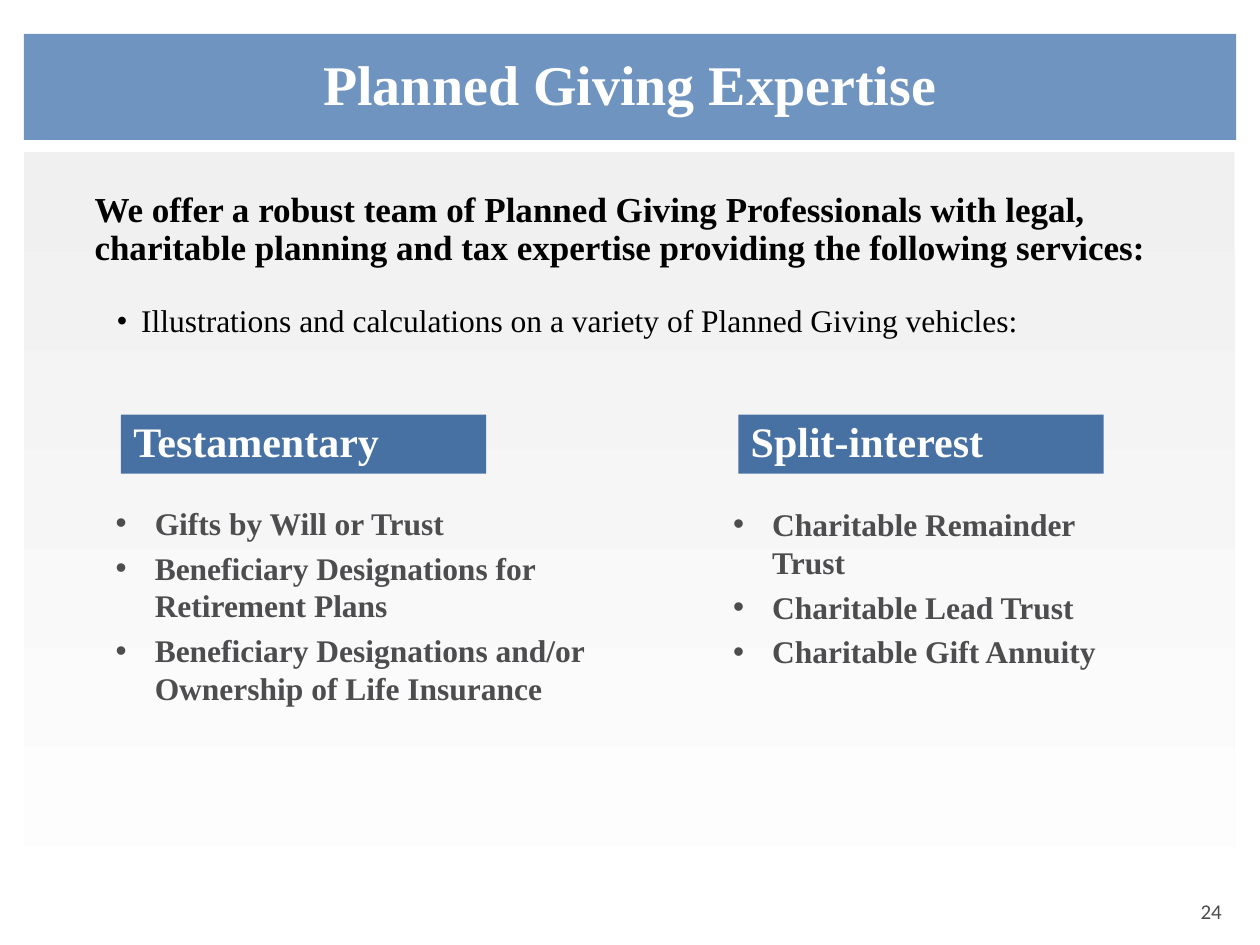
"""Build the Planned Giving Expertise slide."""
from dataclasses import dataclass, field
from typing import Any, NamedTuple

from lxml import etree
from pptx import Presentation, util as u
from pptx.dml.color import RGBColor
from pptx.enum import shapes, text
from pptx.oxml.ns import qn


@dataclass(frozen=True)
class Theme:
    serif: str = "Times New Roman"
    sans: str = "Calibri"
    banner: str = "6F94C0"
    heading: str = "4771A3"
    panel: tuple[str, str] = ("F1F0F0", "FFFFFF")
    white: str = "FFFFFF"
    black: str = "000000"
    grey: str = "4D4D4F"
    title_size: int = 32
    heading_size: int = 24
    intro_size: int = 20
    list_size: int = 18
    number_size: int = 12


class Box(NamedTuple):
    left: float
    top: float
    width: float
    height: float

    def emu(self) -> list[int]:
        return [u.Inches(length) for length in self]


@dataclass(frozen=True)
class Line:
    words: str
    size: int
    color: str
    bold: bool = True
    font: str = "Times New Roman"
    indent: tuple[float, float] | None = None
    bullet_scale: int = 100
    layout: dict[str, Any] = field(default_factory=dict)


@dataclass(frozen=True)
class Column:
    heading: str
    vehicles: tuple[str, ...]
    list_top: float
    list_width: float
    list_height: float


THEME = Theme()
TIGHT = {"line_spacing": 0.9}
COLUMN_LEFT, COLUMN_PITCH = 0.96, 4.9
COLUMNS = (
    Column("Testamentary", (
        "Gifts by Will or Trust",
        "Beneficiary Designations for Retirement Plans",
        "Beneficiary Designations and/or Ownership of Life Insurance",
    ), 3.95, 4.08, 2.04),
    Column("Split-interest", (
        "Charitable Remainder Trust",
        "Charitable Lead Trust",
        "Charitable Gift Annuity",
    ), 3.96, 3.42, 1.43),
)


def assign(target: Any, values: dict[str, Any]) -> None:
    for name, value in values.items():
        setattr(target, name, value)


def add_bullet(paragraph: Any, line: Line) -> None:
    margin, hanging = line.indent
    properties = paragraph._p.get_or_add_pPr()
    properties.set("marL", str(u.Inches(margin)))
    properties.set("indent", str(u.Inches(hanging)))
    for tag, name, value in (
        ("a:buSzPct", "val", str(line.bullet_scale * 1000)),
        ("a:buFont", "typeface", "Arial"),
        ("a:buChar", "char", "•"),
    ):
        etree.SubElement(properties, qn(tag)).set(name, value)


def write(frame: Any, lines: list[Line], **frame_format: Any) -> None:
    assign(frame, {"word_wrap": True, **frame_format})
    for index, line in enumerate(lines):
        paragraph = frame.add_paragraph() if index else frame.paragraphs[0]
        if line.indent:
            add_bullet(paragraph, line)
        assign(paragraph, {"alignment": text.PP_ALIGN.LEFT, **line.layout})
        run = paragraph.add_run()
        run.text = line.words
        assign(run.font, {"name": line.font, "size": u.Pt(line.size), "bold": line.bold})
        run.font.color.rgb = RGBColor.from_string(line.color)


def add_block(slide: Any, box: Box, color: str | None = None) -> Any:
    block = slide.shapes.add_shape(shapes.MSO_SHAPE.RECTANGLE, *box.emu())
    block.shadow.inherit = False
    block.line.fill.background()
    if color:
        block.fill.solid()
        block.fill.fore_color.rgb = RGBColor.from_string(color)
    return block


def add_text(slide: Any, box: Box, lines: list[Line], **frame_format: Any) -> None:
    write(slide.shapes.add_textbox(*box.emu()).text_frame, lines, **frame_format)


def add_panel(slide: Any) -> None:
    panel = add_block(slide, Box(0.19, 1.21, 9.61, 6.29))
    panel.fill.gradient()
    panel.fill.gradient_angle = 270
    for stop, color in zip(panel.fill.gradient_stops, THEME.panel):
        stop.color.rgb = RGBColor.from_string(color)


def add_column(slide: Any, column: Column, left: float) -> None:
    heading = add_block(slide, Box(left, 3.29, 2.9, 0.47), THEME.heading)
    write(heading.text_frame,
          [Line(column.heading, THEME.heading_size, THEME.white, layout=TIGHT)],
          vertical_anchor=text.MSO_ANCHOR.TOP)
    vehicles = [
        Line(vehicle, THEME.list_size, THEME.grey, indent=(0.31, -0.31),
             layout={"space_before": u.Pt(4 if index else 0)})
        for index, vehicle in enumerate(column.vehicles)
    ]
    add_text(slide, Box(left - 0.14, column.list_top, column.list_width, column.list_height),
             vehicles)


def main() -> None:
    deck = Presentation()
    assign(deck, {"slide_width": u.Inches(10), "slide_height": u.Inches(7.5)})
    slide = deck.slides.add_slide(deck.slide_layouts[6])

    add_panel(slide)
    add_text(slide, Box(9.43, 7.08, 0.5, 0.4),
             [Line("24", THEME.number_size, THEME.grey, bold=False, font=THEME.sans)])

    banner = add_block(slide, Box(0.19, 0.27, 9.62, 0.84), THEME.banner)
    write(banner.text_frame,
          [Line("Planned Giving Expertise", THEME.title_size, THEME.white,
                layout={**TIGHT, "alignment": text.PP_ALIGN.CENTER})],
          vertical_anchor=text.MSO_ANCHOR.MIDDLE,
          margin_left=0, margin_top=0, margin_right=0, margin_bottom=0)

    add_text(slide, Box(0.75, 1.53, 8.75, 1.43), [
        Line("We offer a robust team of Planned Giving Professionals with legal, "
             "charitable planning and tax expertise providing the following services:",
             THEME.intro_size, THEME.black, layout=TIGHT),
        Line("Illustrations and calculations on a variety of Planned Giving vehicles:",
             THEME.list_size, THEME.black, bold=False, indent=(0.37, -0.19),
             bullet_scale=90, layout={**TIGHT, "space_before": u.Pt(21)}),
    ], margin_left=0, margin_top=0)

    for index, column in enumerate(COLUMNS):
        add_column(slide, column, COLUMN_LEFT + index * COLUMN_PITCH)

    deck.save("out.pptx")


if __name__ == "__main__":
    main()
